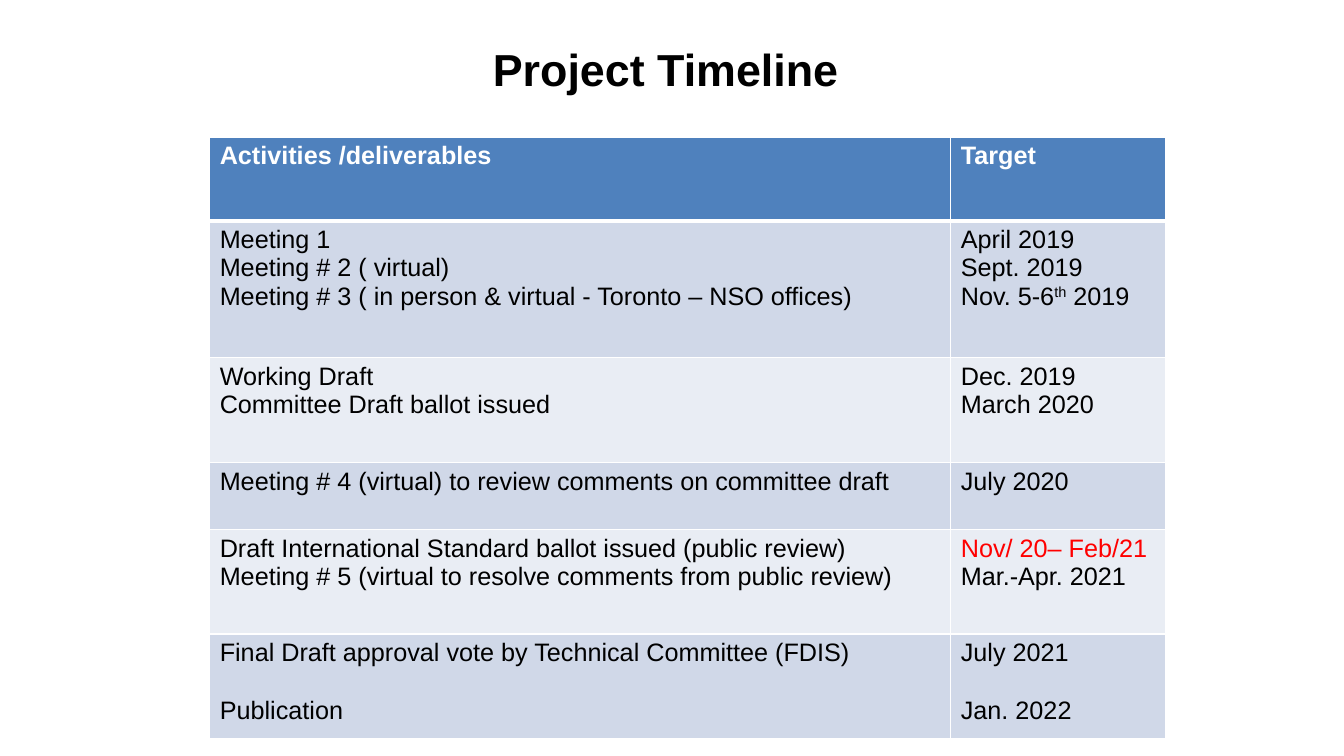
from dataclasses import dataclass

from lxml import etree
from pptx import Presentation
from pptx.dml.color import RGBColor
from pptx.enum.text import MSO_ANCHOR, PP_ALIGN
from pptx.oxml.ns import qn
from pptx.util import Inches, Pt

CENTER = PP_ALIGN.CENTER
MIDDLE = MSO_ANCHOR.MIDDLE
TITLE_ONLY = 5
FONT = "Arial"
BLACK, WHITE, RED = "000000", "FFFFFF", "FF0000"
HEADER_FILL = "4F81BD"
BAND_FILLS = ("D0D8E8", "E9EDF4")
COLUMN_WIDTHS = (7.35, 2.13)
BODY_SIZE = 18
BLANK_LINE = 20.7


@dataclass(frozen=True)
class Run:
    text: str
    color: str = BLACK
    superscript: bool = False


@dataclass(frozen=True)
class Line:
    runs: tuple[Run, ...]
    space_before: float = 0


@dataclass(frozen=True)
class Row:
    height: float
    activities: tuple[Line, ...]
    targets: tuple[Line, ...]


def line(text: str, color: str = BLACK, space_before: float = 0) -> Line:
    return Line((Run(text, color),), space_before)


ROWS = (
    Row(0.83, (line("Activities /deliverables", WHITE),), (line("Target", WHITE),)),
    Row(
        1.36,
        (
            line("Meeting 1"),
            line("Meeting # 2 ( virtual)"),
            line("Meeting # 3 ( in person & virtual - Toronto – NSO offices)"),
        ),
        (
            line("April 2019"),
            line("Sept. 2019"),
            Line((Run("Nov. 5-6"), Run("th", superscript=True), Run(" 2019"))),
        ),
    ),
    Row(
        1.04,
        (line("Working Draft"), line("Committee Draft ballot issued")),
        (line("Dec. 2019"), line("March 2020")),
    ),
    Row(
        0.66,
        (line("Meeting # 4 (virtual) to review comments on committee draft"),),
        (line("July 2020"),),
    ),
    Row(
        1.04,
        (
            line("Draft International Standard ballot issued (public review)"),
            line("Meeting # 5 (virtual to resolve comments from public review)"),
        ),
        (line("Nov/ 20– Feb/21", RED), line("Mar.-Apr. 2021")),
    ),
    Row(
        1.04,
        (
            line("Final Draft approval vote by Technical Committee (FDIS)"),
            line("Publication", space_before=BLANK_LINE),
        ),
        (line("July 2021"), line("Jan. 2022", space_before=BLANK_LINE)),
    ),
)


def rgb(color: str) -> RGBColor:
    return RGBColor.from_string(color)


def add_run(paragraph, content: Run, size: float, bold: bool) -> None:
    run = paragraph.add_run()
    run.text = content.text
    run.font.name = FONT
    run.font.size = Pt(size)
    run.font.bold = bold
    run.font.color.rgb = rgb(content.color)
    if content.superscript:
        run.font._element.set("baseline", "30000")


def set_borders(cell, top: float, bottom: float) -> None:
    """Draw white cell borders; call before setting the cell fill."""
    properties = cell._tc.get_or_add_tcPr()
    for tag, width in (("a:lnL", 1), ("a:lnR", 1), ("a:lnT", top), ("a:lnB", bottom)):
        border = etree.SubElement(properties, qn(tag), w=str(Pt(width)))
        fill = etree.SubElement(border, qn("a:solidFill"))
        etree.SubElement(fill, qn("a:srgbClr"), val=WHITE)


def fill_cell(cell, lines: tuple[Line, ...], row_index: int) -> None:
    is_header = row_index == 0
    set_borders(cell, top=3 if row_index == 1 else 1, bottom=3 if is_header else 1)
    cell.fill.solid()
    cell.fill.fore_color.rgb = rgb(HEADER_FILL if is_header else BAND_FILLS[(row_index - 1) % 2])
    text_frame = cell.text_frame
    for index, content in enumerate(lines):
        paragraph = text_frame.add_paragraph() if index else text_frame.paragraphs[0]
        if content.space_before:
            paragraph.space_before = Pt(content.space_before)
        for run in content.runs:
            add_run(paragraph, run, BODY_SIZE, bold=is_header)


def add_title(slide) -> None:
    title = slide.shapes.title
    title.left, title.top = Inches(2.29), Inches(0)
    title.width, title.height = Inches(8.75), Inches(1.36)
    title.text_frame.vertical_anchor = MIDDLE
    paragraph = title.text_frame.paragraphs[0]
    paragraph.alignment = CENTER
    add_run(paragraph, Run("Project Timeline "), 32, bold=True)


def add_timeline(slide) -> None:
    table = slide.shapes.add_table(
        len(ROWS), len(COLUMN_WIDTHS), Inches(2.08), Inches(1.36),
        Inches(sum(COLUMN_WIDTHS)), Inches(sum(row.height for row in ROWS)),
    ).table
    table.horz_banding = False
    for column, width in zip(table.columns, COLUMN_WIDTHS):
        column.width = Inches(width)
    for row_index, row in enumerate(ROWS):
        table.rows[row_index].height = Inches(row.height)
        for column_index, lines in enumerate((row.activities, row.targets)):
            fill_cell(table.cell(row_index, column_index), lines, row_index)


def main() -> None:
    presentation = Presentation()
    presentation.slide_width = Inches(13.33)
    presentation.slide_height = Inches(7.5)
    slide = presentation.slides.add_slide(presentation.slide_layouts[TITLE_ONLY])
    add_title(slide)
    add_timeline(slide)
    presentation.save("out.pptx")


if __name__ == "__main__":
    main()
